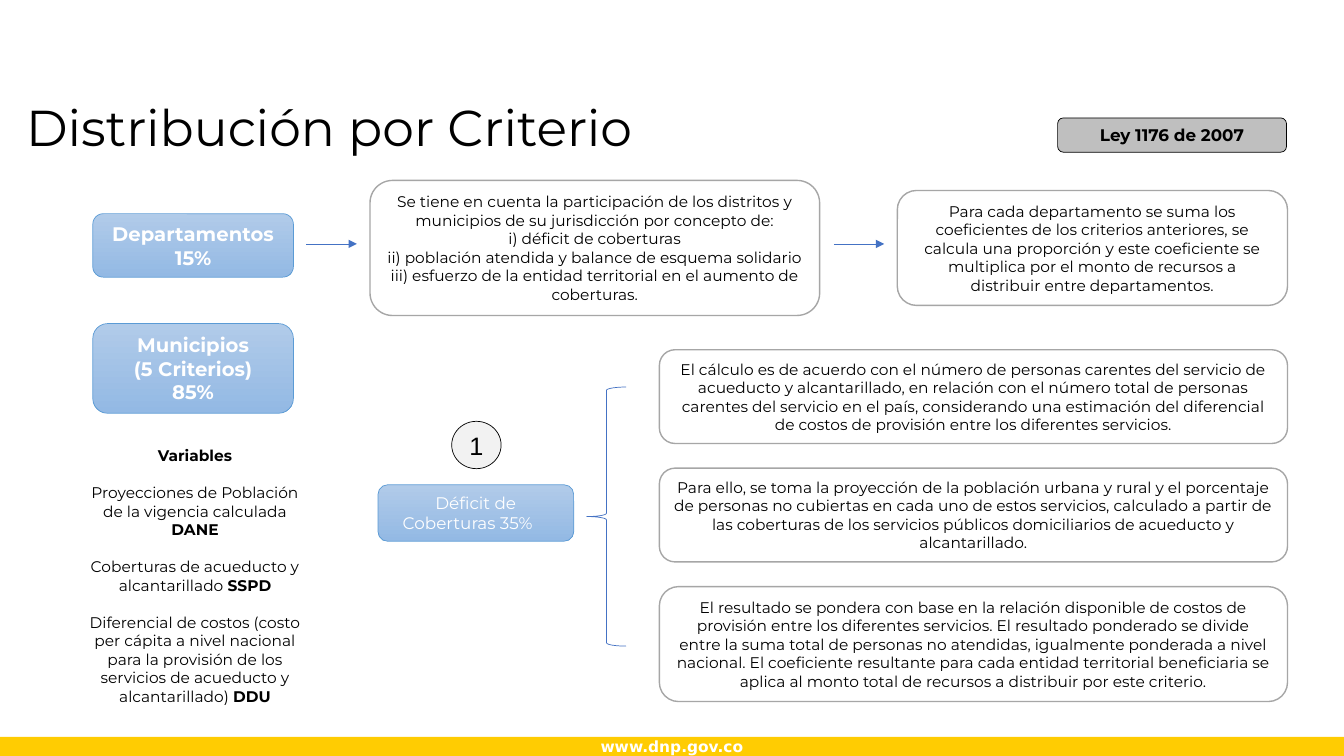
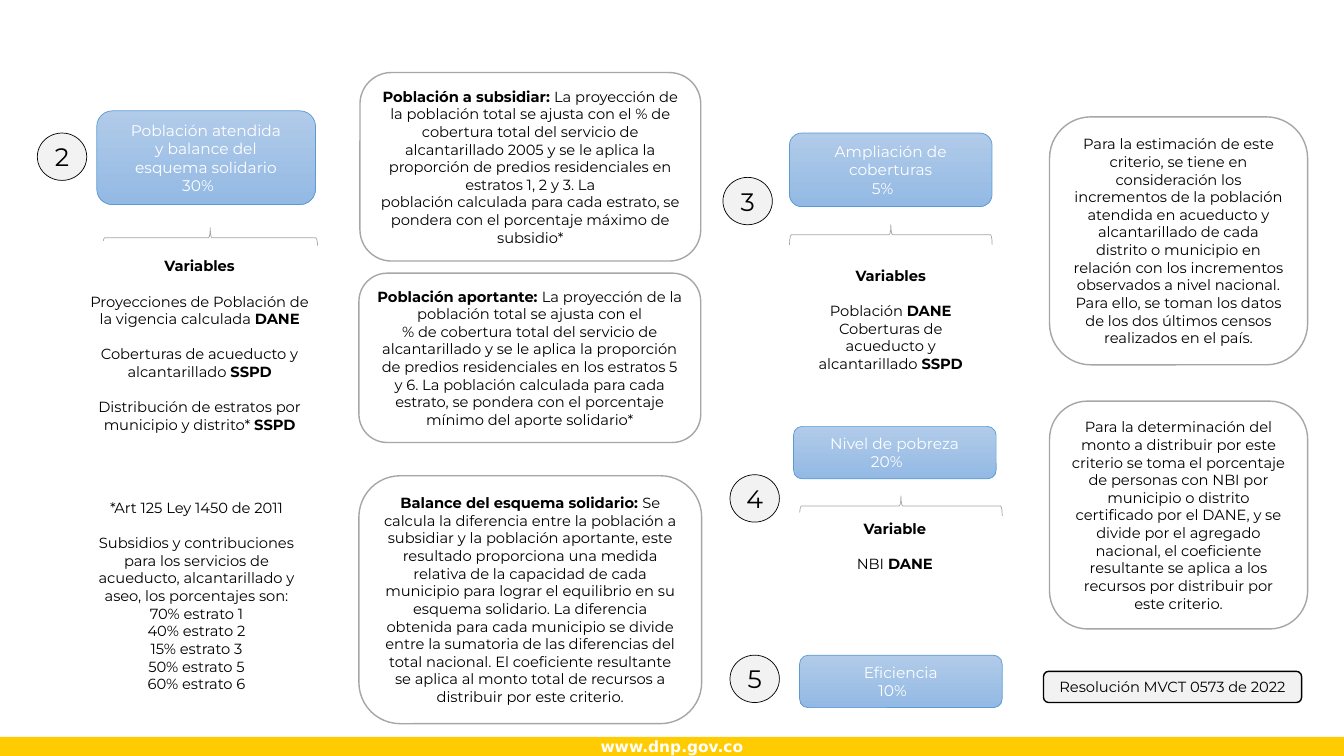
from lxml.etree import SubElement
from pptx import Presentation
from pptx.dml.color import RGBColor
from pptx.enum.shapes import MSO_CONNECTOR, MSO_SHAPE as Shape
from pptx.enum.text import MSO_ANCHOR, PP_ALIGN
from pptx.oxml.ns import qn
from pptx.util import Inches, Pt

COLUMNS, ROWS = 133.3, 75
CELL = Inches(0.1)
COLORS = {
    "white": "FFFFFF", "black": "000000", "yellow": "FFCC02",
    "sky": "B1CBE9", "blue": "93B9E4", "edge": "5B9BD5", "arrow": "4472C4",
    "gray": "A6A6A6", "silver": "BFBFBF", "pale": "F2F2F2",
}
FONT = "Montserrat"
BADGE_WIDTH, BADGE_HEIGHT = 4.9, 4.7
LABEL_SHIFT = 1.6


def cells(count):
    return round(count * CELL)


def color(name):
    return RGBColor.from_string(COLORS[name])


class Board:
    """Draws on the current slide; places are left, top, width, height in grid cells."""

    def __init__(self):
        self.deck = Presentation()
        self.deck.slide_width, self.deck.slide_height = cells(COLUMNS), cells(ROWS)
        self.shapes = None
        self.size = 11

    def new_slide(self, size):
        """Start a slide whose body text has the given size."""
        self.size = size
        self.shapes = self.deck.slides.add_slide(self.deck.slide_layouts[6]).shapes
        band = self.shape(Shape.RECTANGLE, (0, 73.1, COLUMNS, 1.9), "yellow")
        band.text_frame.margin_top = band.text_frame.margin_bottom = 0
        self.put_text(band, ["**www.dnp.gov.co**"], 11, "white", "DejaVu Sans")

    def shape(self, kind, place, fill=None, line=None, width=0.5):
        box = self.shapes.add_shape(kind, *map(cells, place))
        box.shadow.inherit = False
        if fill:
            box.fill.solid()
            box.fill.fore_color.rgb = color(fill)
        else:
            box.fill.background()
        if line:
            box.line.color.rgb = color(line)
            box.line.width = Pt(width)
        else:
            box.line.fill.background()
        return box

    def put_text(self, box, blocks, size, ink="black", font=FONT, align=PP_ALIGN.CENTER):
        """Set blocks one line apart; newlines split paragraphs, ** marks bold."""
        frame = box.text_frame
        frame.word_wrap = True
        frame.vertical_anchor = MSO_ANCHOR.MIDDLE
        lines = [(text, block > 0 and row == 0)
                 for block, content in enumerate(blocks)
                 for row, text in enumerate(content.split("\n"))]
        for index, (text, spaced) in enumerate(lines):
            para = frame.add_paragraph() if index else frame.paragraphs[0]
            para.alignment = align
            if spaced:
                para.space_before = Pt(round(size * 1.2, 1))
            for order, piece in enumerate(text.split("**")):
                if piece:
                    span = para.add_run()
                    span.text = piece
                    span.font.name = font
                    span.font.size = Pt(size)
                    span.font.bold = order % 2 == 1
                    span.font.color.rgb = color(ink)
        return frame

    def title(self, place, text):
        box = self.shapes.add_textbox(*map(cells, place))
        frame = self.put_text(box, [text], 36, align=PP_ALIGN.LEFT)
        frame.paragraphs[0].line_spacing = 0.9

    def card(self, place, *blocks):
        box = self.shape(Shape.ROUNDED_RECTANGLE, place, "white", "gray", 1)
        self.put_text(box, blocks, self.size)

    def card_stack(self, left, top, width, gap, cards):
        for height, text in cards:
            self.card((left, top, width, height), text)
            top += height + gap

    def note(self, place, *blocks):
        self.put_text(self.shape(Shape.ROUNDED_RECTANGLE, place, "white"), blocks, self.size)

    def tag(self, place, text, fill, size, width):
        box = self.shape(Shape.ROUNDED_RECTANGLE, place, fill, "black", width)
        self.put_text(box, [text], size)

    def label(self, place, text, size):
        box = self.shape(Shape.ROUNDED_RECTANGLE, place, "blue", "edge")
        box.fill.gradient()
        box.fill.gradient_angle = 270
        for stop, name in zip(box.fill.gradient_stops, ("sky", "blue")):
            stop.color.rgb = color(name)
        return self.put_text(box, [text], size, "white")

    def criterion(self, number, corner, place, text, size=11, font=FONT):
        """Numbered badge and label; the label's last line sits a little to the left."""
        badge = self.shape(Shape.OVAL, (*corner, BADGE_WIDTH, BADGE_HEIGHT), "pale", "black")
        badge.text_frame.margin_left = badge.text_frame.margin_right = 0
        self.put_text(badge, [str(number)], 18, font=font)
        frame = self.label(place, text, size)
        frame.margin_right += cells(LABEL_SHIFT)
        indent = "marL" if len(frame.paragraphs) > 1 else "indent"
        properties = frame.paragraphs[0]._p.get_or_add_pPr()
        properties.set(indent, str(cells(LABEL_SHIFT)))

    def arrow(self, left, top, length):
        ends = map(cells, (left, top, left + length, top))
        line = self.shapes.add_connector(MSO_CONNECTOR.STRAIGHT, *ends)
        line.line.color.rgb = color("arrow")
        line.line.width = Pt(0.5)
        properties = line._element.spPr
        SubElement(properties.find(qn("a:ln")), qn("a:tailEnd"), type="triangle")
        SubElement(properties, qn("a:effectLst"))

    def side_brace(self, place):
        self.shape(Shape.LEFT_BRACE, place, line="arrow")

    def top_brace(self, left, top, width, depth=2):
        """Brace lying over a column, with its tip upwards."""
        place = (left + (width - depth) / 2, top + (depth - width) / 2, depth, width)
        self.shape(Shape.LEFT_BRACE, place, line="gray").rotation = 90


def distribution_slide(board):
    board.new_slide(11)
    board.title((1.6, 10.1, 86.4, 5.7), "Distribución por Criterio")
    board.tag((104.9, 11.7, 22.7, 3.4), "**Ley 1176 de 2007**", "silver", 12, 0.5)
    board.label((9.2, 21.2, 19.9, 6.3), "**Departamentos**\n**15%**", 14)
    board.label((9.2, 32.1, 19.9, 8.9), "**Municipios**\n**(5 Criterios)**\n**85%**", 14)
    for left in (30.4, 82.7):
        board.arrow(left, 24.2, 5)
    board.card(
        (36.7, 17.9, 44.6, 13.4),
        "Se tiene en cuenta la participación de los distritos y municipios de su "
        "jurisdicción por concepto de:\ni) déficit de coberturas\n"
        "ii) población atendida y balance de esquema solidario\n"
        "iii) esfuerzo de la entidad territorial en el aumento de coberturas.")
    board.card(
        (89, 18.9, 38.7, 11.4),
        "Para cada departamento se suma los coeficientes de los criterios anteriores, se "
        "calcula una proporción y este coeficiente se\n"
        "multiplica por el monto de recursos a distribuir entre departamentos.")
    board.note(
        (6.5, 42.5, 25.7, 29.3), "**Variables**",
        "Proyecciones de Población de la vigencia calculada **DANE**",
        "Coberturas de acueducto y alcantarillado **SSPD**",
        "Diferencial de costos (costo per cápita a nivel nacional para la provisión de "
        "los servicios de acueducto y alcantarillado) **DDU**")
    board.criterion(1, (44.8, 41.8), (37.5, 48.1, 19.4, 5.6),
                    "Déficit de Coberturas 35%", 12, "Arial")
    board.side_brace((58.2, 38.4, 3.9, 25.7))
    board.card_stack(65.4, 34.7, 62.3, 2.45, [
        (9.3, "El cálculo es de acuerdo con el número de personas carentes del servicio de "
              "acueducto y alcantarillado, en relación con el número total de personas "
              "carentes del servicio en el país, considerando una estimación del diferencial "
              "de costos de provisión entre los diferentes servicios."),
        (9.3, "Para ello, se toma la proyección de la población urbana y rural y el porcentaje "
              "de personas no cubiertas en cada uno de estos servicios, calculado a partir de "
              "las coberturas de los servicios públicos domiciliarios de acueducto y "
              "alcantarillado."),
        (11.4, "El resultado se pondera con base en la relación disponible de costos de "
               "provisión entre los diferentes servicios. El resultado ponderado se divide "
               "entre la suma total de personas no atendidas, igualmente ponderada a nivel "
               "nacional. El coeficiente resultante para cada entidad territorial "
               "beneficiaria se aplica al monto total de recursos a distribuir por este "
               "criterio."),
    ])


def criteria_slide(board):
    board.new_slide(10.5)
    for number, corner, place, text in [
        (2, (3.7, 13.2), (9.6, 11, 21.7, 9.3),
         "Población atendida y balance del esquema solidario\n30%"),
        (3, (71.7, 17.6), (78.3, 13.2, 20.1, 7.3), "Ampliación de coberturas\n5%"),
        (4, (72.4, 47.1), (78.7, 42.3, 20.1, 5.2), "Nivel de pobreza\n20%"),
        (5, (72.4, 65), (79.3, 65, 20.1, 5.2), "Eficiencia\n10%"),
    ]:
        board.criterion(number, corner, place, text)
    for left, top, width in [(10.2, 22.6, 21.3), (78.3, 22.3, 20.1), (79.3, 49.2, 20.1)]:
        board.top_brace(left, top, width)
    board.note(
        (6.4, 23.9, 26.8, 20.7), "**Variables**",
        "Proyecciones de Población de la vigencia calculada **DANE**",
        "Coberturas de acueducto y alcantarillado **SSPD**",
        "Distribución de estratos por municipio y distrito* **SSPD**")
    board.note(
        (6.1, 47.8, 26.8, 22.6), "*Art 125 Ley 1450 de 2011",
        "Subsidios y contribuciones para los servicios de acueducto, alcantarillado y aseo, "
        "los porcentajes son:\n70% estrato 1\n40% estrato 2\n15% estrato 3\n"
        "50% estrato 5\n60% estrato 6")
    board.note(
        (78.3, 25.3, 20.1, 12.8), "**Variables**",
        "Población **DANE**\nCoberturas de acueducto y alcantarillado **SSPD**")
    board.note((78.7, 50.7, 20.1, 7), "**Variable**", "NBI **DANE**")
    board.card(
        (35.7, 7.2, 33.8, 18.7),
        "**Población a subsidiar: **La proyección de la población total se ajusta con el % de "
        "cobertura total del servicio de alcantarillado 2005 y se le aplica la proporción de "
        "predios residenciales en estratos 1, 2 y 3. La\n"
        "población calculada para cada estrato, se pondera con el porcentaje máximo de "
        "subsidio*")
    board.card(
        (35.6, 27.1, 33.9, 16.8),
        "**Población aportante: **La proyección de la población total se ajusta con el\n"
        "% de cobertura total del servicio de alcantarillado y se le aplica la proporción de "
        "predios residenciales en los estratos 5 y 6. La población calculada para cada "
        "estrato, se pondera con el porcentaje mínimo del aporte solidario*")
    board.card(
        (35.6, 47.2, 34, 24.6),
        "**Balance del esquema solidario: **Se calcula la diferencia entre la población a "
        "subsidiar y la población aportante, este resultado proporciona una medida relativa "
        "de la capacidad de cada municipio para lograr el equilibrio en su esquema solidario. "
        "La diferencia obtenida para cada municipio se divide entre la sumatoria de las "
        "diferencias del total nacional. El coeficiente resultante se aplica al monto total "
        "de recursos a distribuir por este criterio.")
    board.card(
        (104.1, 11.6, 25.6, 24.6),
        "Para la estimación de este criterio, se tiene en consideración los incrementos de la "
        "población atendida en acueducto y alcantarillado de cada distrito o municipio en "
        "relación con los incrementos observados a nivel nacional. Para ello, se toman los "
        "datos de los dos últimos censos realizados en el país.")
    board.card(
        (104.1, 39.8, 25.6, 22.6),
        "Para la determinación del monto a distribuir por este criterio se toma el porcentaje "
        "de personas con NBI por municipio o distrito certificado por el DANE, y se divide "
        "por el agregado\nnacional, el coeficiente resultante se aplica a los recursos por "
        "distribuir por este criterio.")
    board.tag((103.5, 66.6, 25.6, 3.1), "Resolución MVCT 0573 de 2022", "pale", 10.5, 1)


def main():
    board = Board()
    distribution_slide(board)
    criteria_slide(board)
    board.deck.save("out.pptx")


if __name__ == "__main__":
    main()
